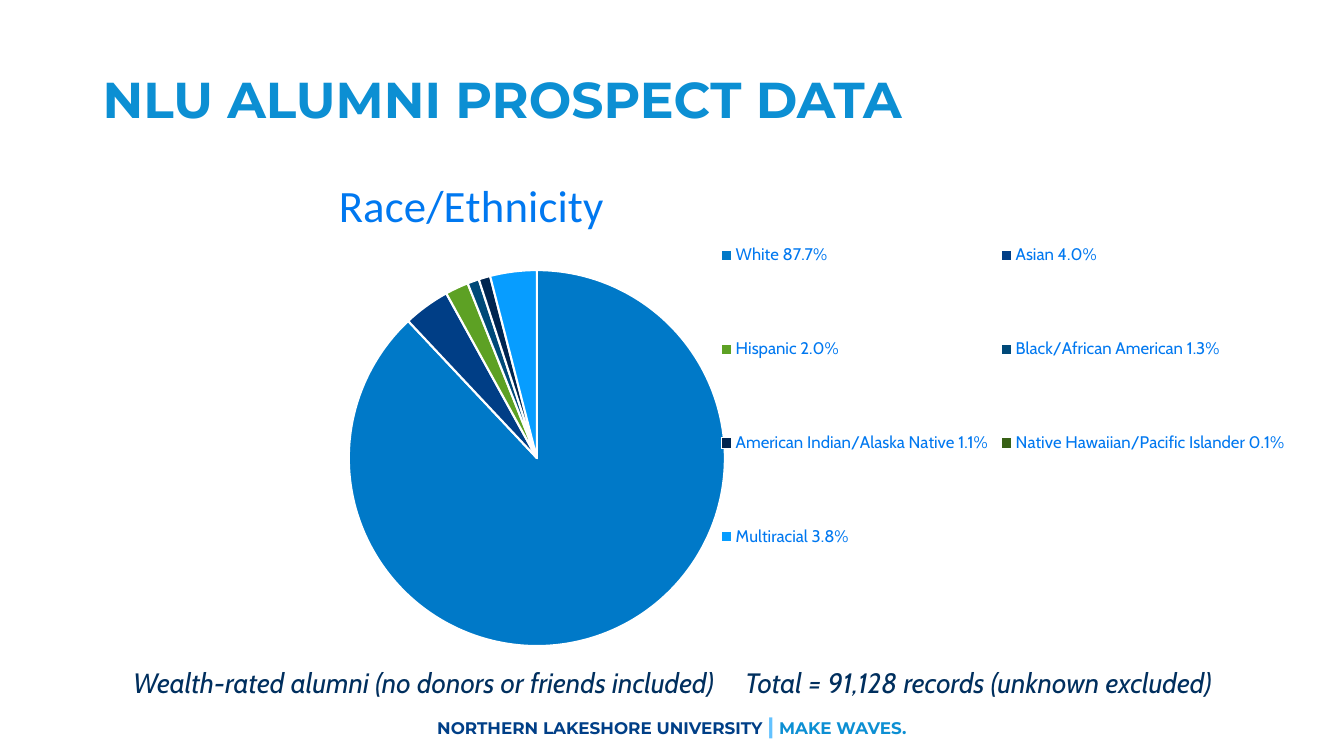
from pptx import Presentation
from pptx.chart.data import CategoryChartData
from pptx.dml.color import RGBColor
from pptx.enum.chart import XL_CHART_TYPE, XL_LEGEND_POSITION
from pptx.enum.text import MSO_ANCHOR, PP_ALIGN
from pptx.oxml import parse_xml
from pptx.oxml.ns import nsdecls, qn
from pptx.util import Inches, Pt

NAVY = RGBColor(0x00, 0x3F, 0x87)
INK = RGBColor(0x00, 0x2F, 0x5E)
SKY = RGBColor(0x0C, 0x8F, 0xD3)
PALE = RGBColor(0x63, 0xC2, 0xFF)
AZURE = RGBColor(0x00, 0x78, 0xF0)
WHITE = RGBColor(0xFF, 0xFF, 0xFF)

GROUPS = [
    ("White 87.7%", 88, RGBColor(0x00, 0x79, 0xC8)),
    ("Asian 4.0%", 4, RGBColor(0x00, 0x3E, 0x86)),
    ("Hispanic 2.0%", 2, RGBColor(0x5D, 0xA1, 0x24)),
    ("Black/African American 1.3%", 1, RGBColor(0x00, 0x49, 0x78)),
    ("American Indian/Alaska Native 1.1%", 1, RGBColor(0x00, 0x25, 0x50)),
    ("Native Hawaiian/Pacific Islander 0.1%", 0, RGBColor(0x38, 0x61, 0x16)),
    ("Multiracial 3.8%", 4, RGBColor(0x07, 0x9D, 0xFF)),
]


def style(font, name, size, color, bold=False, italic=False):
    """Set the look of a font."""
    font.name, font.size = name, Pt(size)
    font.bold, font.italic = bold, italic
    font.color.rgb = color


def add_run(p, text, *look, **flags):
    """Append one styled run to a paragraph."""
    r = p.add_run()
    r.text = text
    style(r.font, *look, **flags)


def add_box(s, box, anchor):
    """Add a wrapping text box and return its text frame."""
    tf = s.shapes.add_textbox(*map(Inches, box)).text_frame
    tf.word_wrap = True
    tf.vertical_anchor = anchor
    return tf


def add_title(s, box):
    """Add the slide heading."""
    p = add_box(s, box, MSO_ANCHOR.MIDDLE).paragraphs[0]
    p.line_spacing = 0.9
    add_run(p, "NLU ALUMNI PROSPECT DATA", "Montserrat", 36, SKY, bold=True)


def add_footer(s, box):
    """Add the school name and slogan."""
    p = add_box(s, box, MSO_ANCHOR.MIDDLE).paragraphs[0]
    p.alignment = PP_ALIGN.CENTER
    for text, size, color in [("NORTHERN LAKESHORE UNIVERSITY ", 12, NAVY),
                              ("|", 16, PALE), (" ", 12, NAVY),
                              ("MAKE WAVES.", 12, SKY)]:
        add_run(p, text, "Montserrat", size, color, bold=True)


def add_note(s, box, indent, second):
    """Add the two-part note, its second part at a tab stop."""
    tf = add_box(s, box, MSO_ANCHOR.TOP)
    tf.margin_left = Inches(indent)
    tf.margin_right = 0
    p = tf.paragraphs[0]
    p.alignment = PP_ALIGN.LEFT
    stop = Inches(second - indent)
    p._p.get_or_add_pPr().append(parse_xml(
        f'<a:tabLst {nsdecls("a")}><a:tab pos="{stop}" algn="l"/></a:tabLst>'))
    add_run(p, "Wealth-rated alumni (no donors or friends included)\t"
               "Total = 91,128 records (unknown excluded)",
            "Cabin", 20, INK, italic=True)


def place(part, index, box, area):
    """Place a chart part at an area in inches within the chart's box."""
    for old in part.findall(qn("c:layout")):
        part.remove(old)
    target = '<c:layoutTarget val="inner"/>' if part.tag == qn("c:plotArea") else ""
    modes = "".join(f'<c:{k}Mode val="edge"/>' for k in "xy")
    sizes = "".join(f'<c:{k} val="{v / whole}"/>'
                    for k, v, whole in zip("xywh", area, box[2:] * 2))
    part.insert(index, parse_xml(
        f'<c:layout {nsdecls("c")}><c:manualLayout>{target}{modes}{sizes}'
        '</c:manualLayout></c:layout>'))


def add_pie(s, box):
    """Add the race and ethnicity pie with its two-column legend."""
    data = CategoryChartData()
    data.categories = [label for label, _, _ in GROUPS]
    data.add_series("Series 1", [share for _, share, _ in GROUPS])
    chart = s.shapes.add_chart(XL_CHART_TYPE.PIE, *map(Inches, box), data).chart
    style(chart.font, "Calibri", 10, INK)

    chart.has_title = True
    add_run(chart.chart_title.text_frame.paragraphs[0], "Race/Ethnicity",
            "Calibri", 32, AZURE)
    place(chart.chart_title._element, 1, box, (2.84, 0.09))

    chart.has_legend = True
    legend = chart.legend
    legend.position = XL_LEGEND_POSITION.RIGHT
    legend.include_in_layout = False
    style(legend.font, "Cabin", 12, AZURE)
    place(legend._element, 1, box, (6.64, 0.14, 5.74, 4.46))

    plot = chart.plots[0]
    plot.vary_by_categories = True
    for i, (_, _, color) in enumerate(GROUPS):
        fmt = plot.series[0].points[i].format
        fmt.fill.solid()
        fmt.fill.fore_color.rgb = color
        fmt.line.color.rgb = WHITE
        fmt.line.width = Pt(1.5)
    place(chart._chartSpace.chart.plotArea, 0, box, (3.02, 1.12, 3.73, 3.73))


def main():
    """Build the slide and save it."""
    prs = Presentation()
    prs.slide_width, prs.slide_height = Inches(13.33), Inches(7.5)
    s = prs.slides.add_slide(prs.slide_layouts[6])
    add_footer(s, (0, 7, 13.33, 0.4))
    add_title(s, (0.92, 0.29, 11.5, 1.45))
    add_pie(s, (0.44, 1.56, 12.76, 4.99))
    add_note(s, (0, 6.55, 13.33, 0.44), 1.32, 7.39)
    prs.save("out.pptx")


if __name__ == "__main__":
    main()
